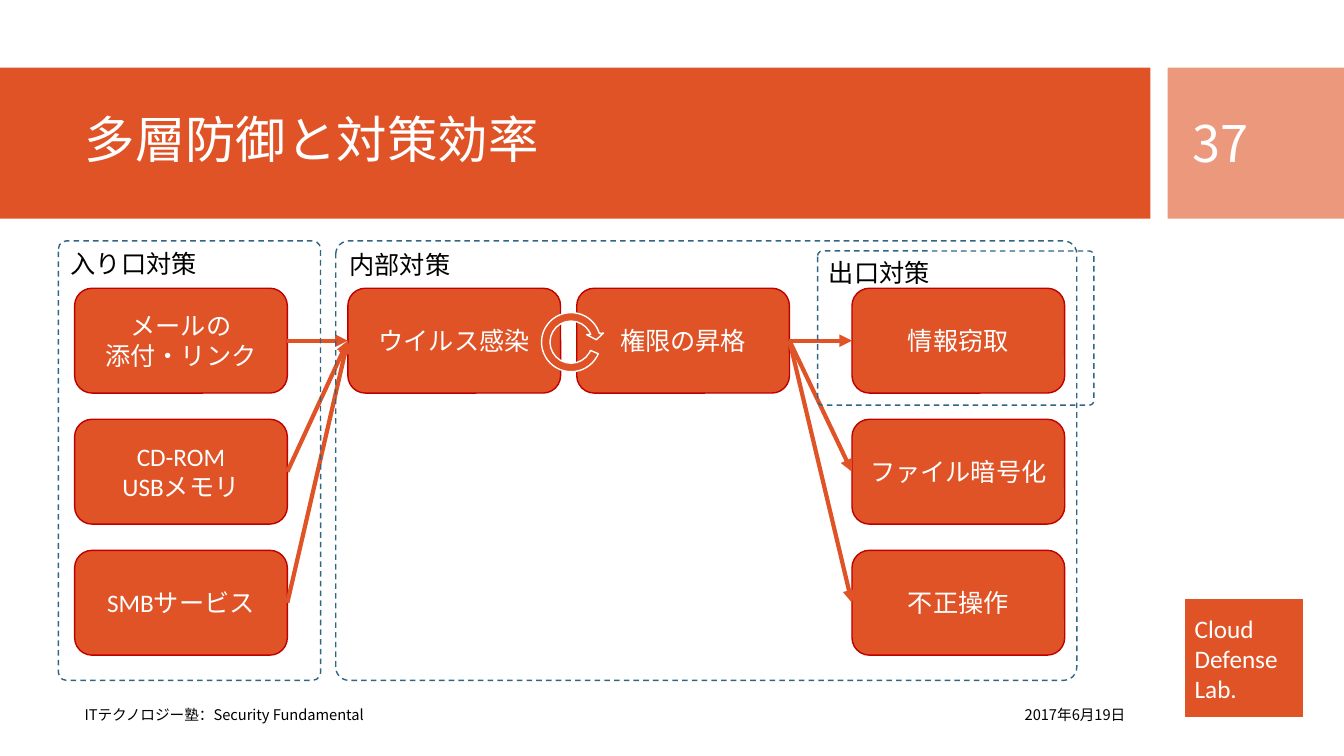
from lxml import etree
from pptx import Presentation
from pptx import util as u
from pptx.dml.color import RGBColor
from pptx.enum import dml, shapes, text
from pptx.oxml import ns

ORANGE = RGBColor(0xDF, 0x53, 0x27)
SALMON = RGBColor(0xEC, 0x98, 0x7D)
RED = RGBColor(0xC0, 0x00, 0x00)
BLUE = RGBColor(0x30, 0x66, 0x84)
WHITE = RGBColor(0xFF, 0xFF, 0xFF)
BLACK = RGBColor(0x00, 0x00, 0x00)
LATIN = "Calibri"
ASIAN = "Noto Sans CJK JP"
KIND = shapes.MSO_SHAPE
SIDE = text.PP_ALIGN
HIGH = text.MSO_ANCHOR
LEFT_SITE, RIGHT_SITE = 1, 3


class Deck:
    def __init__(self):
        self.prs = Presentation()
        self.prs.slide_width = u.Inches(13.33)
        self.prs.slide_height = u.Inches(7.5)
        self.slide = self.prs.slides.add_slide(self.prs.slide_layouts[5])

    def apply(self, item, values):
        for name, value in values.items():
            setattr(item, name, value)

    def box(self, at):
        return [u.Inches(n) for n in at]

    def letter(self, shape, words, color, size=18, font=LATIN,
               align=SIDE.LEFT, anchor=HIGH.MIDDLE, **para):
        frame = shape.text_frame
        frame.text = words
        self.apply(frame, {"word_wrap": True, "vertical_anchor": anchor,
                           "auto_size": text.MSO_AUTO_SIZE.NONE})
        for line in frame.paragraphs:
            self.apply(line, {"alignment": align, **para})
            for run in line.runs:
                self.apply(run.font, {"size": u.Pt(size), "name": font})
                run.font.color.rgb = color
        for style in shape.element.iter(ns.qn("a:rPr")):
            etree.SubElement(style, ns.qn("a:ea")).set("typeface", ASIAN)

    def title(self, at, words):
        head = self.slide.shapes.title
        names = ("left", "top", "width", "height")
        self.apply(head, dict(zip(names, self.box(at))))
        self.letter(head, words, WHITE, 36, ASIAN, line_spacing=0.9)
        head.element.getparent().append(head.element)

    def label(self, at, words, color, size, align=SIDE.LEFT):
        area = self.slide.shapes.add_textbox(*self.box(at))
        self.letter(area, words, color, size, ASIAN, align)

    def shape(self, kind, at, fill=None, line=None, dash=None, adj=()):
        item = self.slide.shapes.add_shape(kind, *self.box(at))
        item.shadow.inherit = False
        if fill is None:
            item.fill.background()
        else:
            item.fill.solid()
            item.fill.fore_color.rgb = fill
        if line is None:
            item.line.fill.background()
        else:
            item.line.color.rgb = line
            self.apply(item.line, {"width": u.Pt(1), "dash_style": dash})
        for i, value in enumerate(adj):
            item.adjustments[i] = value
        return item

    def step(self, left, row, words):
        at = (left, 2.86 + 1.3 * row, 2.11, 1.04)
        item = self.shape(KIND.ROUNDED_RECTANGLE, at, ORANGE, RED)
        self.letter(item, words, WHITE, align=SIDE.CENTER)
        return item

    def zone(self, at, words):
        item = self.shape(KIND.ROUNDED_RECTANGLE, at, line=BLUE,
                          dash=dml.MSO_LINE.DASH, adj=[0.03])
        self.letter(item, words, BLACK, anchor=HIGH.TOP)

    def arrow(self, start, end):
        link = self.slide.shapes.add_connector(
            shapes.MSO_CONNECTOR.STRAIGHT, 0, 0, 0, 0)
        link.begin_connect(start, RIGHT_SITE)
        link.end_connect(end, LEFT_SITE)
        link.line.color.rgb = ORANGE
        link.line.width = u.Pt(3)
        props = link.element.spPr
        stroke = props.find(ns.qn("a:ln"))
        etree.SubElement(stroke, ns.qn("a:tailEnd")).set("type", "triangle")
        etree.SubElement(props, ns.qn("a:effectLst"))


def main():
    deck = Deck()
    badge = deck.shape(KIND.RECTANGLE, (11.75, 5.94, 1.18, 1.18), ORANGE, WHITE)
    deck.letter(badge, "Cloud\nDefense\nLab.", WHITE)
    deck.shape(KIND.RECTANGLE, (0, 0.67, 11.41, 1.5), ORANGE)
    deck.shape(KIND.RECTANGLE, (11.58, 0.67, 1.75, 1.5), SALMON)
    deck.title((0.74, 0.82, 10.51, 1.18), "多層防御と対策効率")
    deck.label((11.73, 0.82, 1.26, 1.19), "37", WHITE, 36)
    deck.label((8.26, 6.89, 3, 0.4), "2017年6月19日", BLACK, 10.5, SIDE.RIGHT)
    deck.label((0.74, 6.89, 7.51, 0.4),
               "ITテクノロジー塾：Security Fundamental", BLACK, 10.5)

    entries = ("メールの\n添付・リンク", "CD-ROM\nUSBメモリ", "SMBサービス")
    harms = ("情報窃取", "ファイル暗号化", "不正操作")
    sources = [deck.step(0.74, row, words) for row, words in enumerate(entries)]
    virus = deck.step(3.45, 0, "ウイルス感染")
    rights = deck.step(5.72, 0, "権限の昇格")
    results = [deck.step(8.45, row, words) for row, words in enumerate(harms)]
    for source in sources:
        deck.arrow(source, virus)
    for result in results:
        deck.arrow(rights, result)

    deck.shape(KIND.CIRCULAR_ARROW, (5.33, 3.06, 0.67, 0.67), ORANGE, WHITE,
               adj=[0.125, 8.09, 204.58, 13.86, 0.125])
    deck.zone((0.58, 2.39, 2.6, 4.36), "入り口対策")
    deck.zone((3.33, 2.39, 7.35, 4.36), "内部対策")
    deck.zone((8.11, 2.49, 2.74, 1.53), "出口対策")
    deck.prs.save("out.pptx")


if __name__ == "__main__":
    main()
